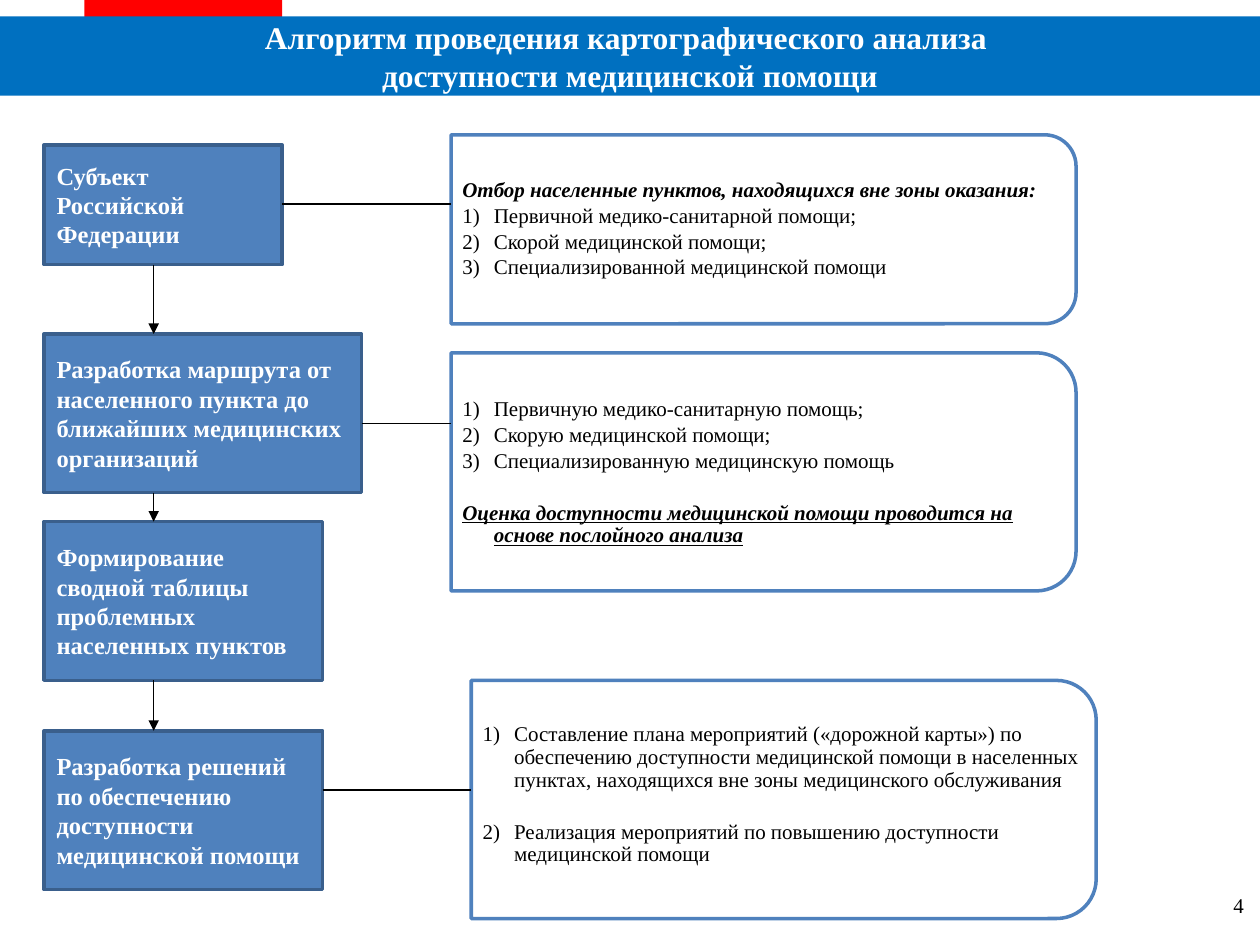
from lxml.etree import SubElement
from pptx import Presentation
from pptx.dml.color import RGBColor
from pptx.enum.shapes import MSO_CONNECTOR, MSO_SHAPE
from pptx.enum.text import MSO_ANCHOR, PP_ALIGN
from pptx.oxml.ns import qn
from pptx.util import Inches, Pt

FONT = "Times New Roman"
COLORS = {
    "red": "FF0000",
    "banner": "0070C0",
    "step": "4F81BD",
    "step_border": "3A5F8C",
    "white": "FFFFFF",
    "black": "000000",
}
STEP_LEFT = 0.35
ARROW_X = 1.22
BLANK_LINE = Pt(14.8)

# Step: top, width, height, text
STEPS = [
    (1.15, 1.89, 0.95, "Субъект Российской Федерации"),
    (2.65, 2.52, 1.26, "Разработка маршрута от населенного пункта до "
                       "ближайших медицинских организаций"),
    (4.14, 2.21, 1.26, "Формирование сводной таблицы проблемных населенных пунктов"),
    (5.8, 2.21, 1.26, "Разработка решений по обеспечению доступности медицинской помощи"),
]

# Panel: left, top, height; text box: top, width, height, bottom inset;
# paragraphs: style, text, whether a gap comes before
PANELS = [
    ((3.58, 1.07, 1.5), (1.15, 4.9, 1.34, 0.01), [
        ("heading", "Отбор населенные пунктов, находящихся вне зоны оказания:", False),
        ("number", "Первичной медико-санитарной помощи;", False),
        ("number", "Скорой медицинской помощи;", False),
        ("number", "Специализированной медицинской помощи", False),
    ]),
    ((3.58, 2.8, 1.89), (2.9, 4.9, 1.71, 0.01), [
        ("number", "Первичную медико-санитарную помощь;", False),
        ("number", "Скорую медицинской помощи;", False),
        ("number", "Специализированную медицинскую помощь", False),
        ("conclusion", "Оценка доступности медицинской помощи проводится на "
                       "основе послойного анализа", True),
    ]),
    ((3.74, 5.4, 1.89), (5.56, 5.12, 1.71, 0.22), [
        ("number", "Составление плана мероприятий («дорожной карты») по обеспечению "
                   "доступности медицинской помощи в населенных пунктах, находящихся "
                   "вне зоны медицинского обслуживания", False),
        ("number", "Реализация мероприятий по повышению доступности "
                   "медицинской помощи", True),
    ]),
]

# Links from steps to panels: start x, end x, y
LINKS = [(2.24, 3.58, 1.62), (2.87, 3.58, 3.36), (2.56, 3.74, 6.27)]


def color(name):
    return RGBColor.from_string(COLORS[name])


def style_font(paragraph, size, color_name, bold=False):
    font = paragraph.font
    font.name, font.size, font.bold = FONT, Pt(size), bold
    font.color.rgb = color(color_name)


def add_block(slide, kind, left, top, width, height, fill, border=None):
    shape = slide.shapes.add_shape(
        kind, Inches(left), Inches(top), Inches(width), Inches(height))
    shape.shadow.inherit = False
    shape.fill.solid()
    shape.fill.fore_color.rgb = color(fill)
    if border:
        shape.line.color.rgb = color(border)
        shape.line.width = Pt(2)
    else:
        shape.line.fill.background()
    return shape


def write_label(shape, text, size, color_name, alignment, bold=False):
    frame = shape.text_frame
    frame.word_wrap = True
    frame.vertical_anchor = MSO_ANCHOR.MIDDLE
    paragraph = frame.paragraphs[0]
    paragraph.text = text
    paragraph.alignment = alignment
    style_font(paragraph, size, color_name, bold)


def add_line(slide, x1, y1, x2, y2, arrow=False):
    connector = slide.shapes.add_connector(
        MSO_CONNECTOR.STRAIGHT, Inches(x1), Inches(y1), Inches(x2), Inches(y2))
    connector.line.color.rgb = color("black")
    connector.line.width = Pt(0.75)
    if arrow:
        SubElement(connector.line._get_or_add_ln(), qn("a:tailEnd"), type="triangle")
    SubElement(connector._element.spPr, qn("a:effectLst"))


def write_panel_paragraph(paragraph, style, text, gap):
    indent = 0.06 if style == "heading" else 0.25
    paragraph.text = text
    paragraph.line_spacing = 0.9
    if gap:
        paragraph.space_before = BLANK_LINE
    paragraph.space_after = Pt(1.8)
    properties = paragraph._p.get_or_add_pPr()
    properties.set("marL", str(Inches(indent)))
    properties.set("indent", str(-Inches(indent)))
    if style == "number":
        SubElement(properties, qn("a:buFont"), typeface="+mj-lt")
        SubElement(properties, qn("a:buAutoNum"), type="arabicParenR")
    else:
        SubElement(properties, qn("a:buNone"))
    style_font(paragraph, 12, "black", bold=style != "number")
    paragraph.font.italic = style != "number"
    paragraph.font.underline = style == "conclusion"


def add_panel(slide, outline, text_area, paragraphs):
    # The top-rounded shape is turned so that its right corners are round
    left, top, height = outline
    width = 4.96
    offset = (width - height) / 2
    shape = add_block(slide, MSO_SHAPE.ROUND_2_SAME_RECTANGLE, left + offset,
                      top - offset, height, width, "white", "step")
    shape.rotation = 90
    fill_color = shape._element.spPr.find(f"{qn('a:solidFill')}/{qn('a:srgbClr')}")
    SubElement(fill_color, qn("a:alpha"), val="90000")

    text_top, text_width, text_height, bottom = text_area
    box = slide.shapes.add_textbox(Inches(left), Inches(text_top),
                                   Inches(text_width), Inches(text_height))
    frame = box.text_frame
    frame.word_wrap = True
    frame.vertical_anchor = MSO_ANCHOR.MIDDLE
    frame.margin_left = Inches(0.09)
    frame.margin_top = frame.margin_right = Inches(0.01)
    frame.margin_bottom = Inches(bottom)
    for index, content in enumerate(paragraphs):
        paragraph = frame.add_paragraph() if index else frame.paragraphs[0]
        write_panel_paragraph(paragraph, *content)


def main():
    presentation = Presentation()
    presentation.slide_width, presentation.slide_height = Inches(10), Inches(7.5)
    slide = presentation.slides.add_slide(presentation.slide_layouts[6])

    # Header and page number
    add_block(slide, MSO_SHAPE.RECTANGLE, 0.67, 0, 1.57, 0.21, "red")
    banner = add_block(slide, MSO_SHAPE.RECTANGLE, 0, 0.13, 10, 0.63, "banner")
    write_label(banner, "Алгоритм проведения картографического анализа \v"
                        "доступности медицинской помощи",
                18, "white", PP_ALIGN.CENTER, bold=True)
    number = slide.shapes.add_textbox(Inches(7.64), Inches(6.98), Inches(2.33), Inches(0.4))
    write_label(number, "4", 12, "black", PP_ALIGN.RIGHT)

    # Steps and the arrows between them
    for top, width, height, text in STEPS:
        step = add_block(slide, MSO_SHAPE.RECTANGLE, STEP_LEFT, top, width, height,
                         "step", "step_border")
        write_label(step, text, 14, "white", PP_ALIGN.LEFT, bold=True)
    for (top, _, height, _), following in zip(STEPS, STEPS[1:]):
        add_line(slide, ARROW_X, top + height, ARROW_X, following[0], arrow=True)

    # Detail panels and their links
    for panel in PANELS:
        add_panel(slide, *panel)
    for start, end, y in LINKS:
        add_line(slide, start, y, end, y)

    presentation.save("out.pptx")


if __name__ == "__main__":
    main()
